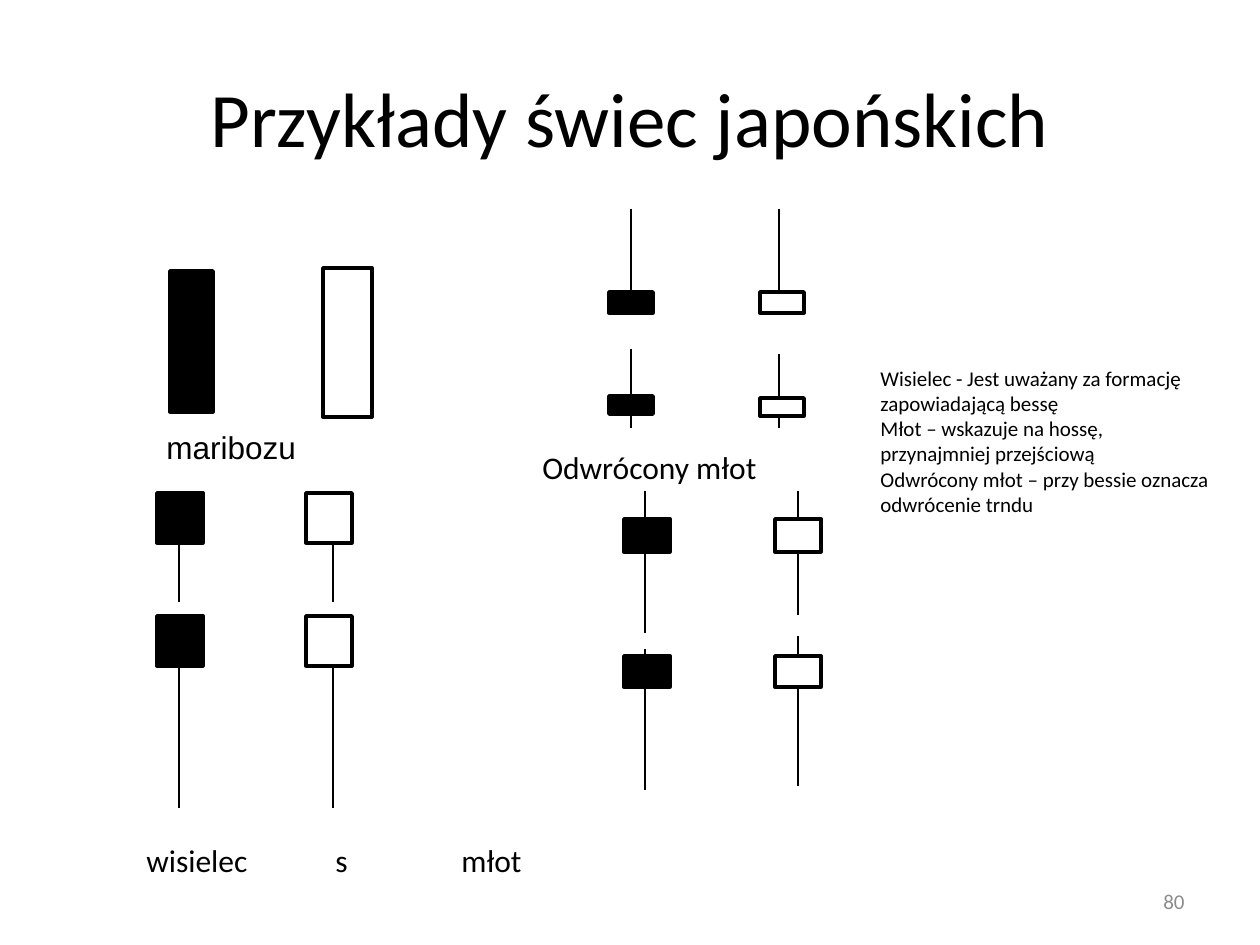
import pptx
import pptx.dml.color
import pptx.enum.shapes
import pptx.enum.text
import pptx.oxml.ns
import pptx.util
from lxml import etree

PX = pptx.util.Inches(1) / 126
BLACK = pptx.dml.color.RGBColor(0x00, 0x00, 0x00)
WHITE = pptx.dml.color.RGBColor(0xFF, 0xFF, 0xFF)
GREY = pptx.dml.color.RGBColor(0x8C, 0x8C, 0x8C)
ALIGN = pptx.enum.text.PP_ALIGN
ANCHOR = pptx.enum.text.MSO_ANCHOR


def px(*lengths):
    return [round(n * PX) for n in lengths]


def add_run(p, text, size, font="Calibri", color=BLACK):
    r = p.add_run()
    r.text = text
    r.font.size = pptx.util.Pt(size)
    r.font.name = font
    r.font.color.rgb = color


def add_title(s, text):
    sp = s.shapes.title
    sp.left, sp.top, sp.width, sp.height = px(63, 38, 1134, 157)
    sp.text_frame.vertical_anchor = ANCHOR.MIDDLE
    p = sp.text_frame.paragraphs[0]
    p.alignment = ALIGN.CENTER
    add_run(p, text, 44)


def add_text(s, box, lines, size, font="Calibri", color=BLACK,
             align=ALIGN.LEFT, anchor=ANCHOR.TOP):
    sp = s.shapes.add_textbox(*px(*box))
    tf = sp.text_frame
    tf.word_wrap = True
    tf.vertical_anchor = anchor
    for i, line in enumerate(lines):
        p = tf.add_paragraph() if i else tf.paragraphs[0]
        p.alignment = align
        add_run(p, line, size, font, color)
    return sp


def add_caption(s, box, text, font="Calibri"):
    sp = add_text(s, box, [text], 18, font)
    sp.fill.solid()
    sp.fill.fore_color.rgb = WHITE


def add_body(s, box, fill):
    sp = s.shapes.add_shape(pptx.enum.shapes.MSO_SHAPE.RECTANGLE, *px(*box))
    sp.shadow.inherit = False
    sp.fill.solid()
    sp.fill.fore_color.rgb = fill
    sp.line.color.rgb = BLACK
    sp.line.width = pptx.util.Pt(2)


def add_wick(s, x, top, bottom, weight):
    line = s.shapes.add_connector(pptx.enum.shapes.MSO_CONNECTOR.STRAIGHT,
                                  *px(x, top, x, bottom))
    line.line.color.rgb = BLACK
    line.line.width = pptx.util.Pt(weight)
    etree.SubElement(line._element.spPr, pptx.oxml.ns.qn("a:effectLst"))


def add_candle(s, body, fill, wick_x, high, low, weight):
    """Draw a body and the wick parts that reach beyond it."""
    x, y, w, h = body
    add_body(s, body, fill)
    if high < y:
        add_wick(s, wick_x, high, y, weight)
    if low > y + h:
        add_wick(s, wick_x, y + h, low, weight)


def add_candles(s, columns, rows, width, weight):
    """Columns are (body x, wick x, fill); each row has (y, h, high, low) per column."""
    for row in rows:
        for (x, wick_x, fill), (y, h, high, low) in zip(columns, row):
            add_candle(s, (x, y, width, h), fill, wick_x, high, low, weight)


def main():
    prs = pptx.Presentation()
    prs.slide_width, prs.slide_height = px(1260, 945)
    s = prs.slides.add_slide(prs.slide_layouts[5])
    add_title(s, "Przykłady świec japońskich")
    add_text(s, (903, 876, 294, 50), ["80"], 12, color=GREY,
             align=ALIGN.RIGHT, anchor=ANCHOR.MIDDLE)

    hanging_man = [[(493, 50, 493, 602)] * 2, [(616, 50, 616, 808)] * 2]
    add_candles(s, [(157, 179, BLACK), (306, 333, WHITE)], hanging_man, 46, 1.5)

    hammer = [[(519, 33, 491, 633), (519, 33, 491, 615)],
              [(656, 31, 649, 790), (656, 31, 636, 786)]]
    add_candles(s, [(624, 645, BLACK), (775, 798, WHITE)], hammer, 46, 1.5)

    add_caption(s, (154, 422, 180, 40), "maribozu", "Arial")
    add_caption(s, (530, 442, 290, 40), "Odwrócony młot")

    add_body(s, (170, 271, 43, 141), BLACK)
    add_body(s, (323, 268, 49, 149), WHITE)

    inverted_hammer = [[(292, 21, 209, 313)] * 2,
                       [(396, 18, 349, 428), (398, 18, 354, 428)]]
    add_candles(s, [(609, 631, BLACK), (760, 779, WHITE)], inverted_hammer, 44, 1)

    notes = add_text(s, (868, 257, 357, 304), [
        "Wisielec - Jest uważany za formację zapowiadającą bessę",
        "Młot – wskazuje na hossę, przynajmniej przejściową",
        "Odwrócony młot – przy bessie oznacza odwrócenie trndu",
    ], 12, anchor=ANCHOR.MIDDLE)
    notes.text_frame.margin_top = px(70)[0]

    labels = add_text(s, (134, 829, 953, 57), ["wisielec\t\ts\t\tmłot"], 18)
    p = labels.text_frame.paragraphs[0]
    p.line_spacing = 1.15
    p.space_after = pptx.util.Pt(10)

    prs.save("out.pptx")


if __name__ == "__main__":
    main()
